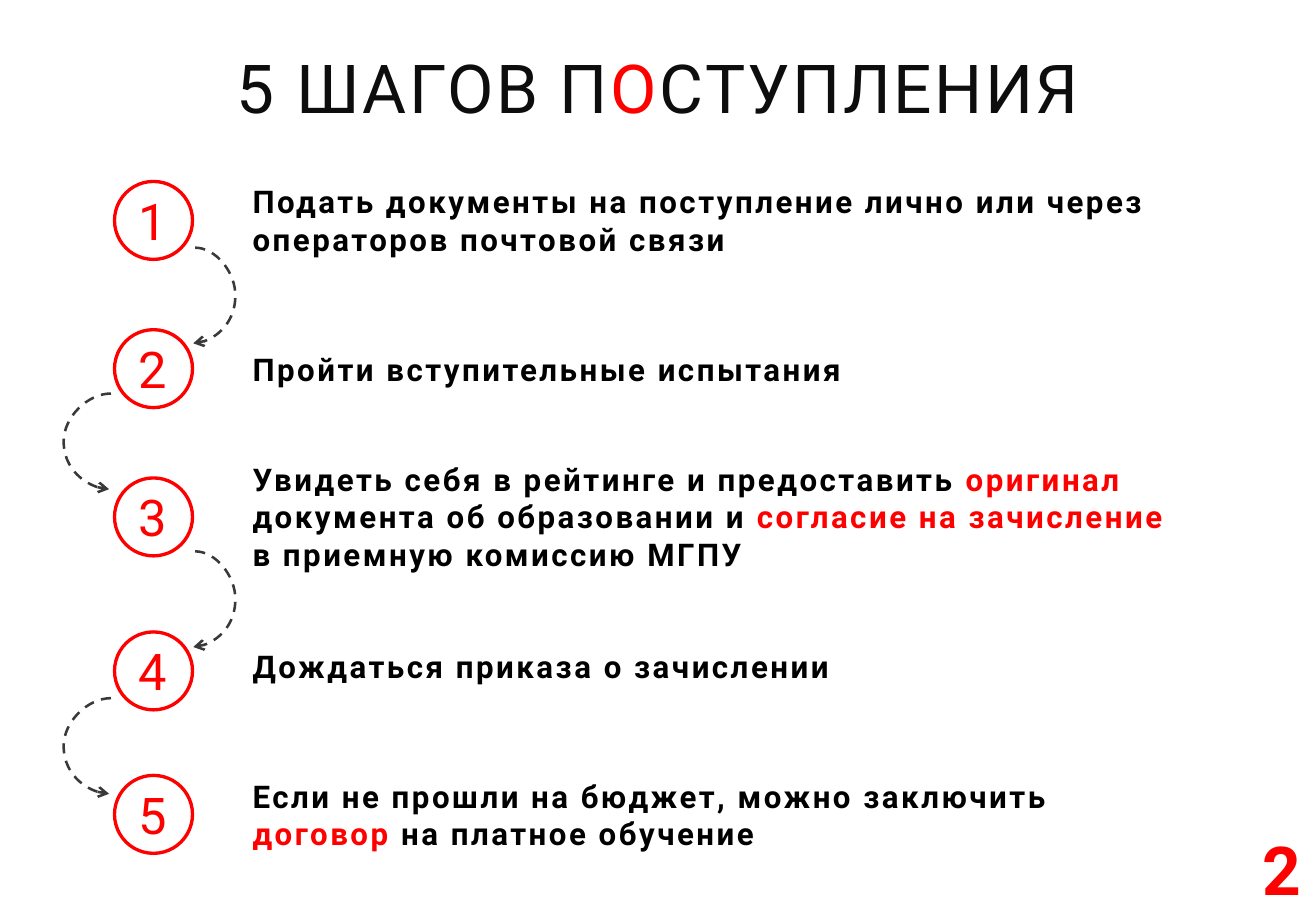
from lxml.etree import SubElement
from pptx import Presentation
from pptx.dml.color import RGBColor
from pptx.enum.dml import MSO_LINE
from pptx.enum.shapes import MSO_CONNECTOR, MSO_SHAPE
from pptx.enum.text import MSO_ANCHOR, MSO_AUTO_SIZE, PP_ALIGN
from pptx.oxml.ns import qn
from pptx.util import Cm, Pt

COLORS = {"red": "FF0000", "black": "000000", "title": "0D0D0D", "arrow": "3B3838"}
FONT = "Roboto"

TITLE = [[("5 ШАГОВ П", "title"), ("О", "red"), ("СТУПЛЕНИЯ", "title")]]
PAGE = [[("2", "red")]]

# ring top, text top, text width, text height (cm), paragraphs of (text, colour)
STEPS = [
    (3.76, 3.73, 22.4, 1.75,
     [[("Подать документы на поступление лично или через операторов почтовой связи", "black")]]),
    (6.86, 6.99, 22.4, 1.45,
     [[("Пройти вступительные испытания", "black")]]),
    (9.96, 9.4, 22.53, 2.79,
     [[("Увидеть себя в рейтинге и предоставить ", "black"), ("оригинал ", "red"),
       ("документа об образовании и ", "black"), ("согласие на зачисление", "red")],
      [("в приемную комиссию МГПУ", "black")]]),
    (13.18, 13.11, 15.9, 1.65,
     [[("Дождаться приказа о зачислении", "black")]]),
    (16.18, 16.21, 17.32, 1.65,
     [[("Если не прошли на бюджет, можно заключить ", "black"), ("договор ", "red"),
       ("на платное обучение", "black")]]),
]
RING_LEFT, RING_SIZE = 2.36, 1.7
TEXT_LEFT = 5.03

ARROW_TOPS = [5.18, 8.23, 11.53, 14.6]
ARROW_WIDTH, ARROW_HEIGHT = 0.04, 2.0
ARROW_SIDES = [(4.04, -0.84), (2.28, 0.99)]  # left edge, bulge to the left


def rgb(name):
    return RGBColor.from_string(COLORS[name])


def write(tf, paragraphs, size, bold=False, spacing=150, align=PP_ALIGN.LEFT):
    for i, runs in enumerate(paragraphs):
        p = tf.paragraphs[0] if i == 0 else tf.add_paragraph()
        p.alignment = align
        p.font.name, p.font.size, p.font.bold = FONT, Pt(size), bold
        for text, color in runs:
            r = p.add_run()
            r.text = text
            r.font.color.rgb = rgb(color)
            if spacing:
                r._r.get_or_add_rPr().set("spc", str(spacing))


def add_text(s, left, top, width, height, paragraphs, size, **style):
    tf = s.shapes.add_textbox(Cm(left), Cm(top), Cm(width), Cm(height)).text_frame
    tf.word_wrap = True
    tf.vertical_anchor = MSO_ANCHOR.MIDDLE
    write(tf, paragraphs, size, **style)
    return tf


def add_number(s, number, top):
    ring = s.shapes.add_shape(MSO_SHAPE.DONUT, Cm(RING_LEFT), Cm(top), Cm(RING_SIZE), Cm(RING_SIZE))
    ring.adjustments[0] = 0.041
    ring.shadow.inherit = False
    ring.fill.solid()
    ring.fill.fore_color.rgb = rgb("red")
    ring.line.fill.background()
    tf = add_text(s, 2.64, top + 0.08, 1.17, 1.55, [[(str(number), "red")]], 30)
    tf.word_wrap = False
    tf.vertical_anchor = MSO_ANCHOR.TOP
    tf.auto_size = MSO_AUTO_SIZE.SHAPE_TO_FIT_TEXT


def add_arrow(s, left, top, bulge):
    """Curved arrow drawn upwards and turned by 180 degrees, so that it points down."""
    c = s.shapes.add_connector(MSO_CONNECTOR.CURVE, Cm(left), Cm(top + ARROW_HEIGHT),
                               Cm(left + ARROW_WIDTH), Cm(top))
    c.line.color.rgb = rgb("arrow")
    c.line.width = Pt(1.5)
    c.line.dash_style = MSO_LINE.DASH
    SubElement(c.line._get_or_add_ln(), qn("a:tailEnd"), type="arrow")
    sp_pr = c._element.spPr
    SubElement(sp_pr, qn("a:effectLst"))
    sp_pr.find(qn("a:xfrm")).set("rot", str(180 * 60000))
    geom = sp_pr.find(qn("a:prstGeom"))
    guides = geom.find(qn("a:avLst"))
    if guides is None:
        guides = SubElement(geom, qn("a:avLst"))
    SubElement(guides, qn("a:gd"), name="adj1", fmla=f"val {round(bulge / ARROW_WIDTH * 100000)}")


def main():
    prs = Presentation()
    prs.slide_width, prs.slide_height = Cm(27.51), Cm(19.05)
    s = prs.slides.add_slide(prs.slide_layouts[5])

    title = s.shapes.title
    title.left, title.top, title.width, title.height = Cm(0), Cm(0.74), Cm(27.51), Cm(2.36)
    title.text_frame.vertical_anchor = MSO_ANCHOR.MIDDLE
    write(title.text_frame, TITLE, 40, align=PP_ALIGN.CENTER)
    title.text_frame.paragraphs[0].line_spacing = 0.9

    add_text(s, 21.26, 17.65, 6.2, 1.02, PAGE, 40, bold=True, spacing=0, align=PP_ALIGN.RIGHT)

    for number, (ring_top, top, width, height, paragraphs) in enumerate(STEPS, 1):
        add_number(s, number, ring_top)
        add_text(s, TEXT_LEFT, top, width, height, paragraphs, 18.5, bold=True)

    for i, top in enumerate(ARROW_TOPS):
        left, bulge = ARROW_SIDES[i % 2]
        add_arrow(s, left, top, bulge)

    prs.save("out.pptx")


if __name__ == "__main__":
    main()
